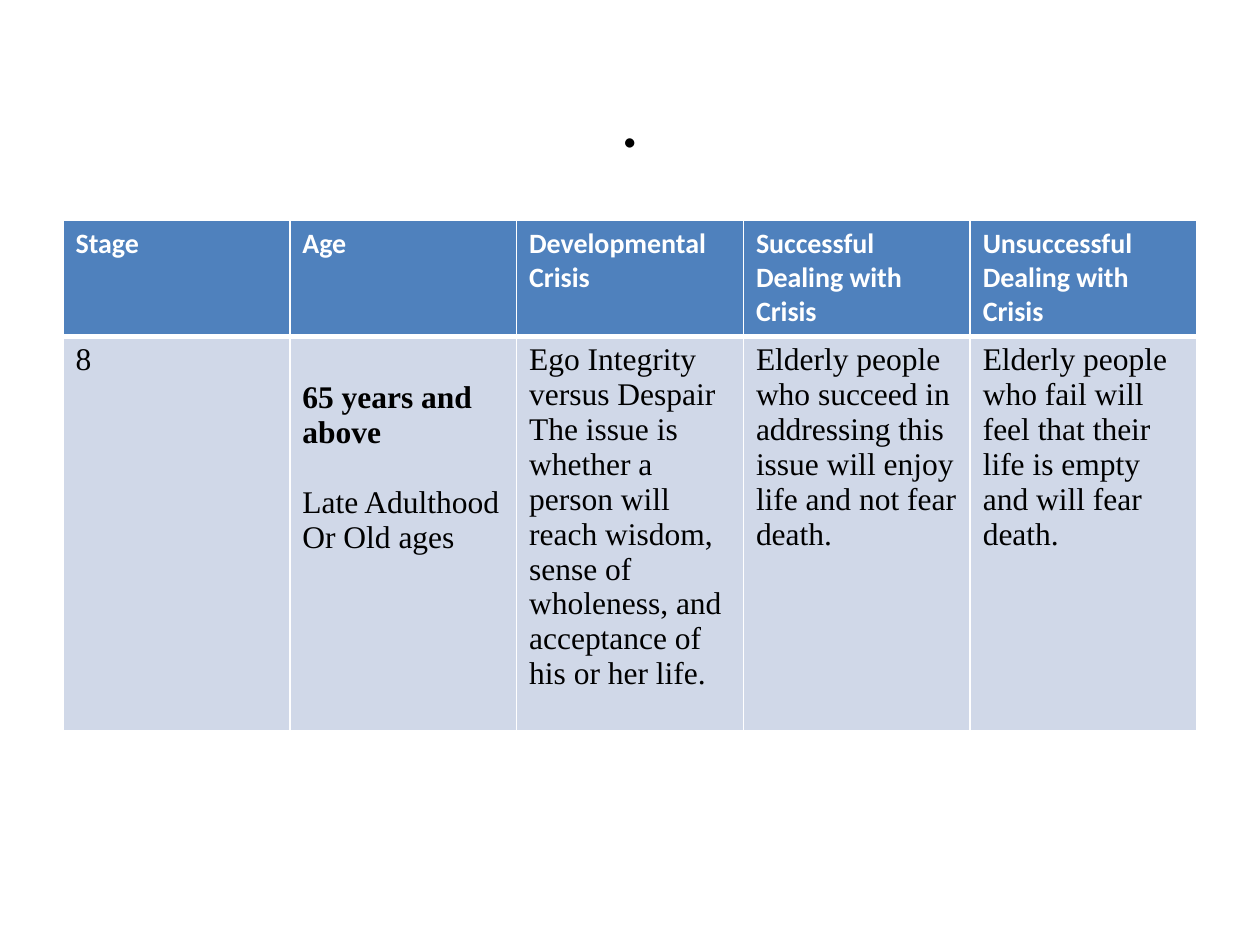
import pptx
import pptx.util
import pptx.dml.color
import pptx.enum.text
import pptx.oxml
import pptx.oxml.ns

Inches = pptx.util.Inches
Pt = pptx.util.Pt
theme = {
    "white": "FFFFFF", "black": "000000", "head": "4F81BD", "body": "D0D8E8",
    "sans": "Calibri", "serif": "Times New Roman",
    "title": 44, "label": 16, "text": 18,
}


def style(par, font, size, color, bold=False):
    for run in par.runs:
        run.font.name = theme[font]
        run.font.size = Pt(theme[size])
        run.font.bold = bold
        run.font.color.rgb = pptx.dml.color.RGBColor.from_string(theme[color])


def border(cell, widths):
    props = cell._tc.get_or_add_tcPr()
    for i, (side, width) in enumerate(zip("LRTB", widths)):
        line = pptx.oxml.parse_xml(
            f'<a:ln{side} {pptx.oxml.ns.nsdecls("a")} w="{Pt(width)}">'
            f'<a:solidFill><a:srgbClr val="{theme["white"]}"/></a:solidFill>'
            f'</a:ln{side}>')
        props.insert(i, line)


deck = pptx.Presentation()
deck.slide_width = Inches(10)
deck.slide_height = Inches(7.5)
slide = deck.slides.add_slide(deck.slide_layouts[6])

title = slide.shapes.add_textbox(Inches(0.5), Inches(0.3), Inches(9), Inches(1.25))
frame = title.text_frame
frame.word_wrap = True
frame.vertical_anchor = pptx.enum.text.MSO_ANCHOR.MIDDLE
frame.text = "."
frame.paragraphs[0].alignment = pptx.enum.text.PP_ALIGN.CENTER
style(frame.paragraphs[0], "sans", "title", "black")

rows = [
    ["Stage", "Age", "Developmental Crisis", "Successful Dealing with Crisis",
     "Unsuccessful Dealing with Crisis"],
    ["8",
     "65 years and above\nLate Adulthood\nOr Old ages",
     "Ego Integrity versus Despair\nThe issue is whether a person will reach wisdom, "
     "sense of wholeness, and acceptance of his or her life.",
     "Elderly people who succeed in addressing this issue will enjoy life and not fear death.",
     "Elderly people who fail will feel that their life is empty and will fear death."],
]
table = slide.shapes.add_table(
    2, 5, Inches(0.5), Inches(1.75), Inches(9), Inches(4.05)).table
for row, height in zip(table.rows, (0.92, 3.13)):
    row.height = Inches(height)

for r, row in enumerate(rows):
    for c, text in enumerate(row):
        cell = table.cell(r, c)
        cell.text_frame.text = text
        cell.fill.solid()
        cell.fill.fore_color.rgb = pptx.dml.color.RGBColor.from_string(
            theme["body" if r else "head"])
        border(cell, (1, 1, 3, 1) if r else (1, 1, 1, 3))
        for par in cell.text_frame.paragraphs:
            if r:
                style(par, "serif", "text", "black")
            else:
                style(par, "sans", "label", "white", True)

age = table.cell(1, 1)
age.margin_top = Inches(0.35)
first, late = age.text_frame.paragraphs[:2]
style(first, "serif", "text", "black", True)
late.space_before = Pt(20)

deck.save("out.pptx")
